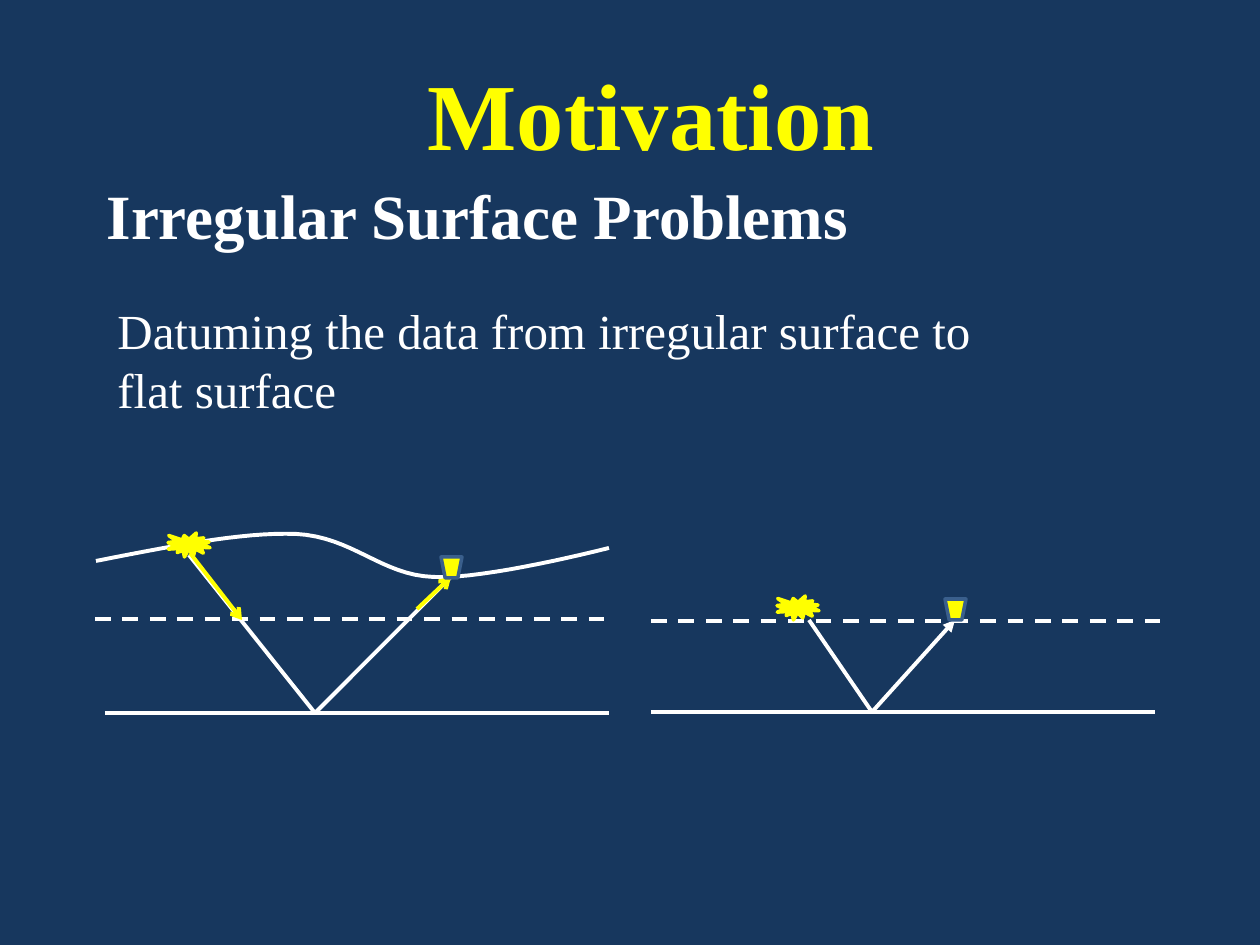
from dataclasses import dataclass

from lxml import etree
from pptx import Presentation
from pptx import util as u
from pptx.dml.color import RGBColor
from pptx.enum import dml, shapes, text
from pptx.oxml import ns

SCALE = 914400 / 126


@dataclass(frozen=True)
class Theme:
    back: str = "17375E"
    ink: str = "FFFFFF"
    glow: str = "FFFF00"
    rim: str = "3A5F8C"
    font: str = "Times New Roman"
    title: int = 54
    head: int = 36
    body: int = 28
    line: float = 2.25
    edge: int = 2


def px(*vals):
    return [u.Emu(round(v * SCALE)) for v in vals]


def rgb(code):
    return RGBColor.from_string(code)


def write(frame, words, font, size, color, bold=False, align=text.PP_ALIGN.LEFT,
          anchor=text.MSO_ANCHOR.MIDDLE, before=0):
    frame.word_wrap = True
    frame.vertical_anchor = anchor
    par = frame.paragraphs[0]
    par.alignment = align
    par.space_before = u.Pt(before)
    run = par.add_run()
    run.text = words
    run.font.name = font
    run.font.size = u.Pt(size)
    run.font.bold = bold
    run.font.color.rgb = rgb(color)


def bend(start, curves, steps=16):
    dots = [start]
    for one, two, end in curves:
        first = dots[-1]
        for i in range(1, steps + 1):
            t = i / steps
            s = 1 - t
            dots.append(tuple(
                s**3 * a + 3 * s * s * t * b + 3 * s * t * t * c + t**3 * d
                for a, b, c, d in zip(first, one, two, end)))
    return dots


class Deck:
    """Draws styled elements on the current slide."""

    def __init__(self, theme):
        self.theme = theme
        self.prs = Presentation()
        self.prs.slide_width, self.prs.slide_height = px(1260, 945)

    def start(self):
        self.slide = self.prs.slides.add_slide(self.prs.slide_layouts[6])
        fill = self.slide.background.fill
        fill.solid()
        fill.fore_color.rgb = rgb(self.theme.back)

    def label(self, box, words, size, color, **style):
        frame = self.slide.shapes.add_textbox(*px(*box)).text_frame
        write(frame, words, self.theme.font, size, color, **style)

    def stroke(self, line, color, width):
        line.color.rgb = rgb(color)
        line.width = u.Pt(width)

    def line(self, start, end, color=None, dash=False, tip=None):
        link = self.slide.shapes.add_connector(
            shapes.MSO_CONNECTOR.STRAIGHT, *px(*start, *end))
        self.stroke(link.line, color or self.theme.ink, self.theme.line)
        if dash:
            link.line.dash_style = dml.MSO_LINE.DASH
        if tip:
            etree.SubElement(link.line._get_or_add_ln(), ns.qn("a:tailEnd"), type=tip)
        etree.SubElement(link._element.spPr, ns.qn("a:effectLst"))

    def curve(self, dots):
        dots = [px(*dot) for dot in dots]
        pen = self.slide.shapes.build_freeform(*dots[0], scale=1)
        pen.add_line_segments(dots[1:], close=False)
        shape = pen.convert_to_shape()
        shape.shadow.inherit = False
        shape.fill.background()
        self.stroke(shape.line, self.theme.ink, self.theme.line)

    def mark(self, kind, box, rim):
        shape = self.slide.shapes.add_shape(kind, *px(*box))
        shape.shadow.inherit = False
        shape.fill.solid()
        shape.fill.fore_color.rgb = rgb(self.theme.glow)
        self.stroke(shape.line, rim, self.theme.edge)

    def source(self, left, top):
        self.mark(shapes.MSO_SHAPE.EXPLOSION1, (left, top, 42, 24), self.theme.glow)

    def phone(self, left, top):
        self.mark(shapes.MSO_SHAPE.FLOWCHART_MANUAL_OPERATION,
                  (left, top, 21, 21), self.theme.rim)


def main():
    theme = Theme()
    deck = Deck(theme)
    deck.start()
    mid = text.PP_ALIGN.CENTER
    deck.label((0, 164, 955, 100), "Irregular Surface Problems", theme.head,
               theme.ink, bold=True, align=mid)
    deck.label((105, 294, 903, 131),
               "Datuming the data from irregular surface to flat surface",
               theme.body, theme.ink, anchor=text.MSO_ANCHOR.TOP, before=14)
    deck.label((84, 34, 1134, 158), "Motivation", theme.title, theme.glow,
               bold=True, align=mid)

    deck.curve(bend((96, 561), [
        ((168, 547), (241, 532), (296, 534)),
        ((353, 537), (381, 575), (433, 577)),
        ((485, 580), (609, 548), (609, 548))]))
    deck.line((95, 619), (609, 619), dash=True)
    deck.line((105, 713), (609, 713))
    deck.line((189, 555), (315, 713))
    deck.line((315, 713), (451, 577))
    deck.line((417, 609), (451, 577), color=theme.glow, tip="arrow")
    deck.source(168, 533)
    deck.line((190, 553), (242, 620), color=theme.glow, tip="arrow")
    deck.phone(441, 557)

    deck.line((651, 621), (1165, 621), dash=True)
    deck.line((809, 620), (872, 712))
    deck.line((872, 712), (955, 620), tip="triangle")
    deck.line((651, 712), (1155, 712))
    deck.source(777, 596)
    deck.phone(945, 599)
    deck.prs.save("out.pptx")


if __name__ == "__main__":
    main()
